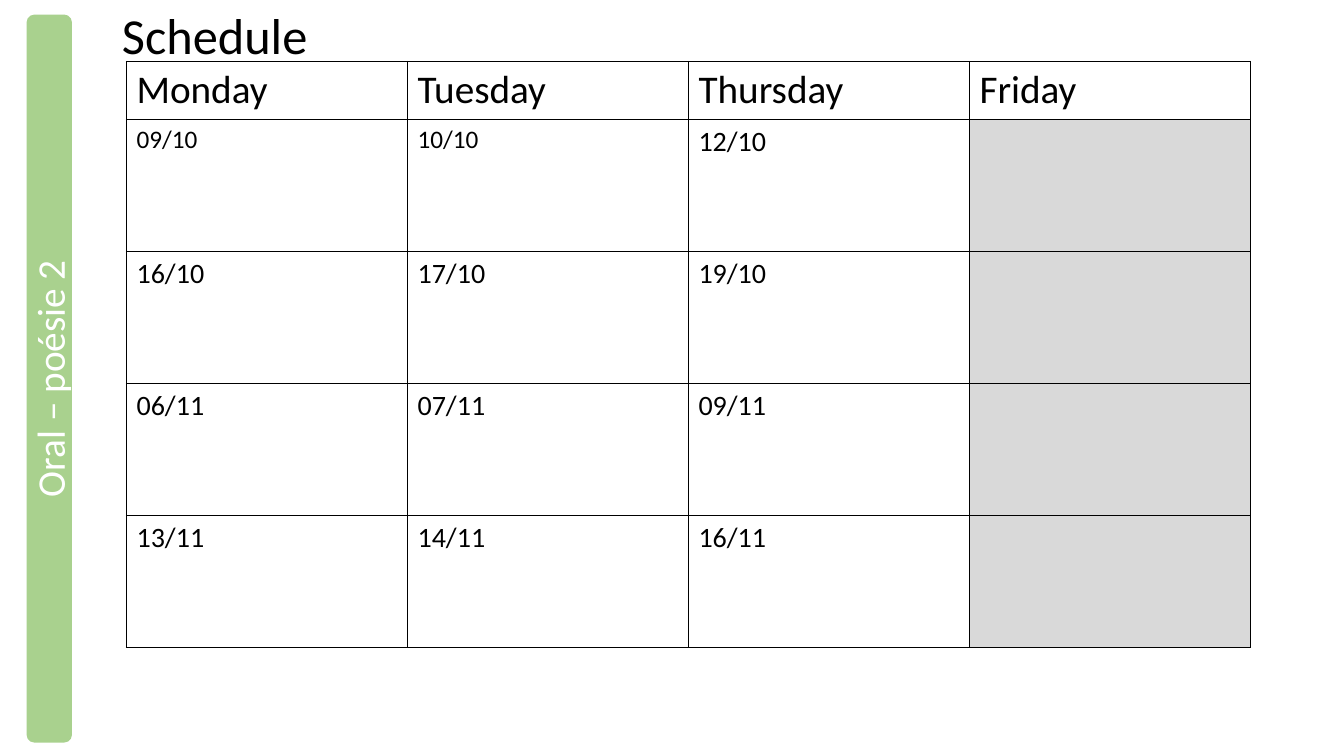
"""Build the weekly oral schedule slide."""
import pptx
import pptx.dml.color
import pptx.enum.shapes
import pptx.enum.text
import pptx.oxml
import pptx.oxml.ns
import pptx.util

Pt = pptx.util.Pt

TITLE = "Schedule"
SIDE_LABEL = "Oral – poésie 2"
SCHEDULE = [
    ("Monday", "Tuesday", "Thursday", "Friday"),
    ("09/10", "10/10", "12/10", ""),
    ("16/10", "17/10", "19/10", ""),
    ("06/11", "07/11", "09/11", ""),
    ("13/11", "14/11", "16/11", ""),
]
SMALL_DATES = ("09/10", "10/10")

THEME = {
    "font": "Calibri",
    "text": "000000",
    "white": "FFFFFF",
    "bar": "A9D18E",
    "free_day": "D9D9D9",
    "title_size": 36,
    "heading_size": 28,
    "date_size": 20,
    "small_date_size": 18,
}

SLIDE_WIDTH, SLIDE_HEIGHT = 960, 540
BAR_LENGTH, BAR_THICKNESS = 520, 32.4
BAR_CENTER = (35.2, 270.4)
TABLE_LEFT, TABLE_TOP = 90.4, 44
COLUMN_WIDTH, HEADER_HEIGHT, WEEK_HEIGHT = 200.7, 36.8, 94.3


def color(name):
    return pptx.dml.color.RGBColor.from_string(THEME[name])


def write(frame, text, size, ink="text"):
    para = frame.paragraphs[0]
    para.text = text
    para.font.name = THEME["font"]
    para.font.size = Pt(size)
    para.font.bold = False
    para.font.color.rgb = color(ink)
    return para


def add_borders(cell):
    properties = cell._tc.get_or_add_tcPr()
    for index, side in enumerate(("lnL", "lnR", "lnT", "lnB")):
        line = pptx.oxml.parse_xml(
            f'<a:{side} {pptx.oxml.ns.nsdecls("a")} w="{Pt(1)}"><a:solidFill>'
            f'<a:srgbClr val="{THEME["text"]}"/></a:solidFill></a:{side}>')
        properties.insert(index, line)


def add_side_bar(slide):
    center_x, center_y = BAR_CENTER
    bar = slide.shapes.add_shape(
        pptx.enum.shapes.MSO_SHAPE.ROUNDED_RECTANGLE,
        Pt(center_x - BAR_LENGTH / 2), Pt(center_y - BAR_THICKNESS / 2),
        Pt(BAR_LENGTH), Pt(BAR_THICKNESS))
    bar.rotation = 270
    bar.adjustments[0] = 0.17
    bar.shadow.inherit = False
    bar.fill.solid()
    bar.fill.fore_color.rgb = color("bar")
    bar.line.fill.background()
    bar.text_frame.word_wrap = True
    bar.text_frame.vertical_anchor = pptx.enum.text.MSO_ANCHOR.MIDDLE
    para = write(bar.text_frame, SIDE_LABEL, THEME["heading_size"], "white")
    para.alignment = pptx.enum.text.PP_ALIGN.CENTER


def text_size(row, text):
    if row == 0:
        return THEME["heading_size"]
    return THEME["small_date_size" if text in SMALL_DATES else "date_size"]


def add_schedule(slide):
    row_count, column_count = len(SCHEDULE), len(SCHEDULE[0])
    height = HEADER_HEIGHT + WEEK_HEIGHT * (row_count - 1)
    table = slide.shapes.add_table(
        row_count, column_count, Pt(TABLE_LEFT), Pt(TABLE_TOP),
        Pt(COLUMN_WIDTH * column_count), Pt(height)).table
    table.first_row = False
    table.horz_banding = False
    for column in table.columns:
        column.width = Pt(COLUMN_WIDTH)
    for row, texts in enumerate(SCHEDULE):
        table.rows[row].height = Pt(WEEK_HEIGHT if row else HEADER_HEIGHT)
        for column, text in enumerate(texts):
            cell = table.cell(row, column)
            cell.fill.solid()
            cell.fill.fore_color.rgb = color("white" if text else "free_day")
            add_borders(cell)
            write(cell.text_frame, text, text_size(row, text))


def add_title(slide):
    box = slide.shapes.add_textbox(Pt(80), Pt(-0.7), Pt(862.6), Pt(50.4))
    box.text_frame.word_wrap = True
    write(box.text_frame, TITLE, THEME["title_size"])


def main():
    deck = pptx.Presentation()
    deck.slide_width, deck.slide_height = Pt(SLIDE_WIDTH), Pt(SLIDE_HEIGHT)
    slide = deck.slides.add_slide(deck.slide_layouts[6])
    add_side_bar(slide)
    add_schedule(slide)
    add_title(slide)
    deck.save("out.pptx")


if __name__ == "__main__":
    main()
